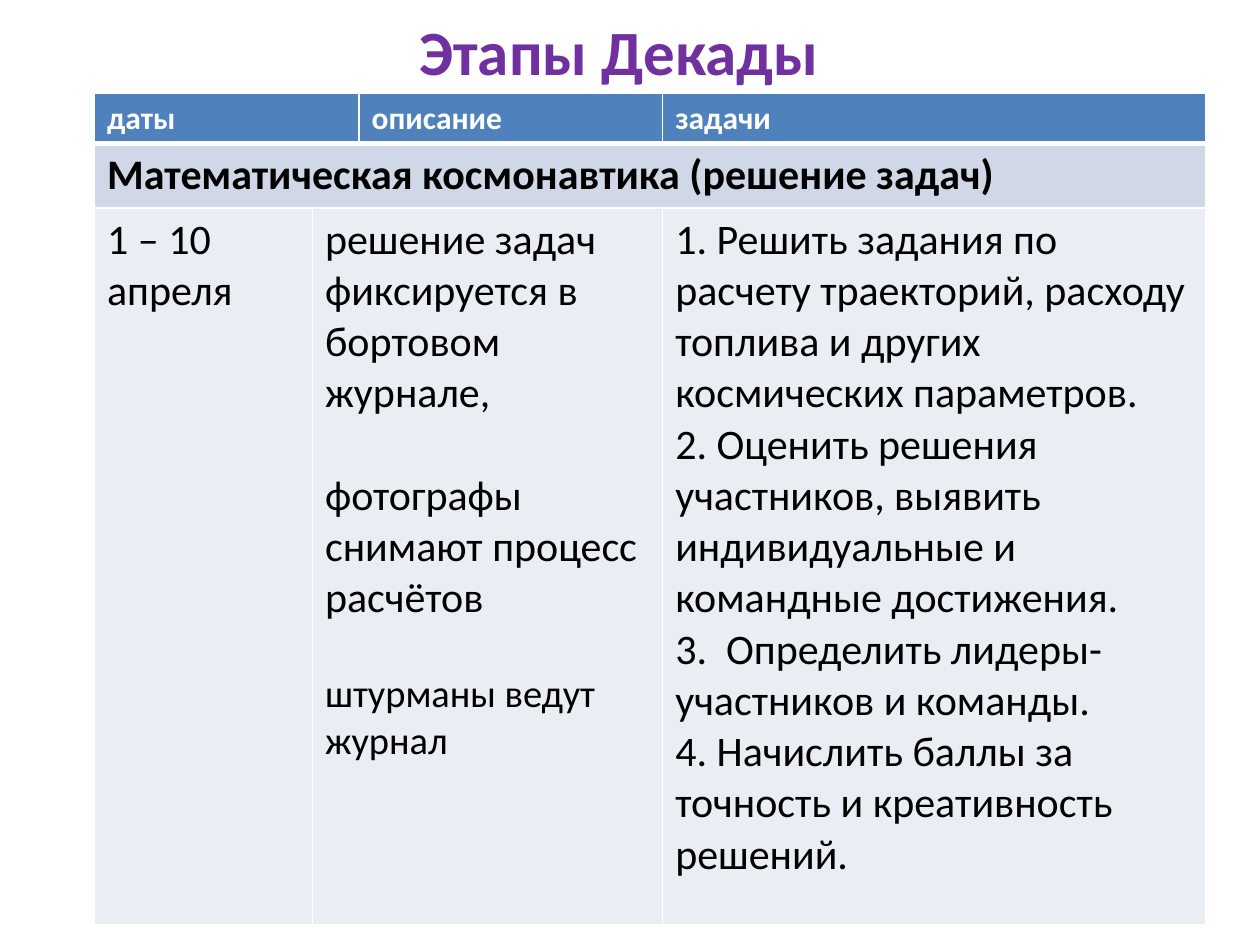
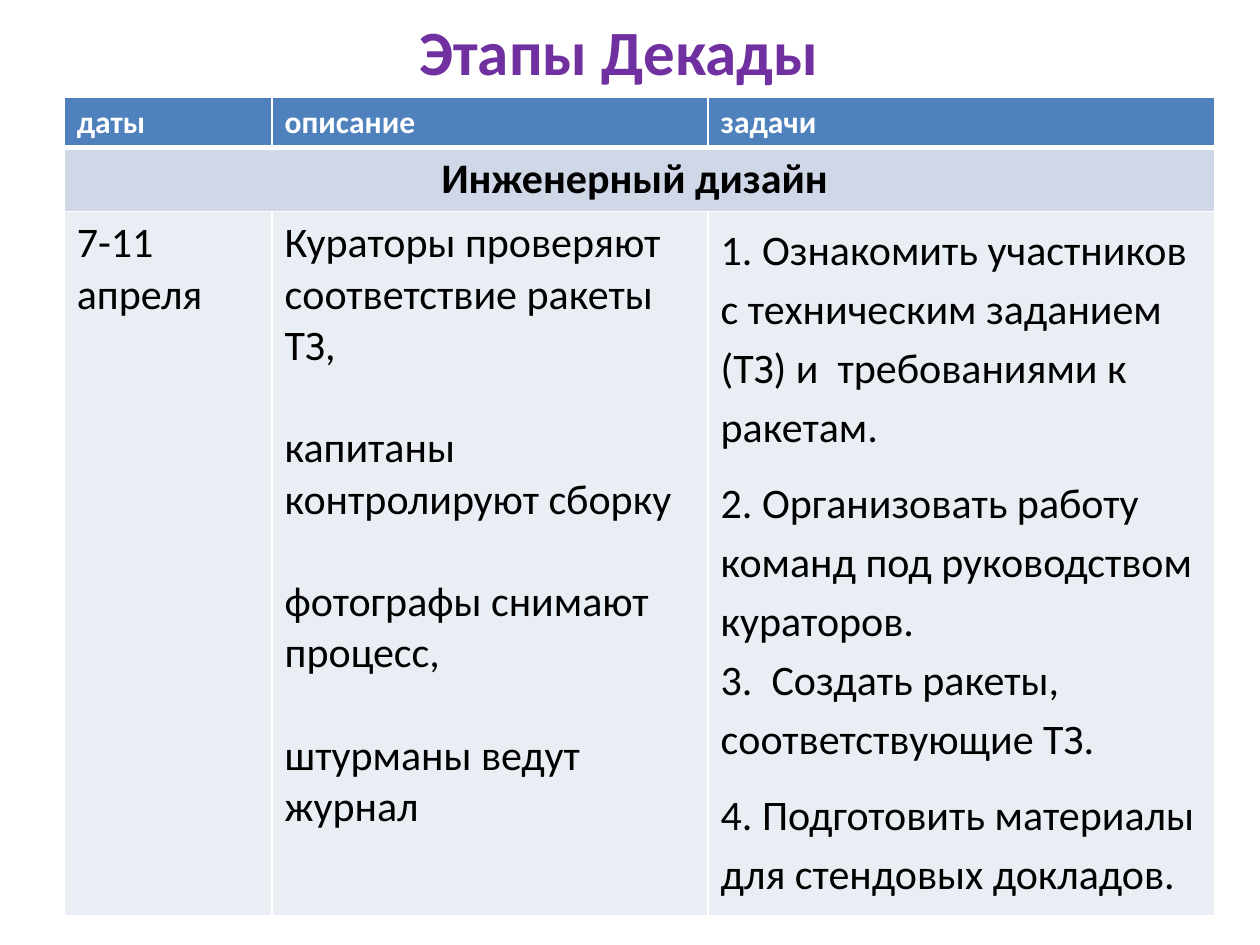
import pptx
import pptx.dml.color
import pptx.enum.text
import pptx.oxml
import pptx.oxml.ns
import pptx.util

COLORS = {
    "title": "7030A0",
    "header": "4F81BD",
    "stage": "D0D8E8",
    "body": "E9EDF4",
    "light": "FFFFFF",
    "dark": "000000",
}
FONT = "Calibri"
ALIGN = pptx.enum.text.PP_ALIGN
HEADINGS = ("даты", "описание", "задачи")


def color(name):
    return pptx.dml.color.RGBColor.from_string(COLORS[name])


def write_text(para, text, size=24, ink="dark", bold=False, align=None,
               before=0, after=0, spacing=None):
    """Fill a paragraph; a line feed in the text becomes a line break."""
    para.alignment = align
    para.space_before = pptx.util.Pt(before)
    para.space_after = pptx.util.Pt(after)
    para.line_spacing = spacing
    for number, line in enumerate(text.split("\n")):
        if number:
            para.add_line_break()
        span = para.add_run()
        span.text = line
        span.font.name = FONT
        span.font.size = pptx.util.Pt(size)
        span.font.bold = bold
        span.font.color.rgb = color(ink)


class StageDeck:
    """Slides on a grid of 100 columns by 75 rows."""

    def __init__(self):
        self.deck = pptx.Presentation()
        self.deck.slide_width = pptx.util.Inches(10)
        self.deck.slide_height = pptx.util.Inches(7.5)
        self.page = None

    def columns(self, count):
        return round(self.deck.slide_width * count / 100)

    def rows(self, count):
        return round(self.deck.slide_height * count / 75)

    def place(self, left, top, width, height):
        return (self.columns(left), self.rows(top),
                self.columns(width), self.rows(height))

    def add_page(self, title):
        self.page = self.deck.slides.add_slide(self.deck.slide_layouts[6])
        box = self.page.shapes.add_textbox(*self.place(17, 0.5, 65.4, 7.1))
        frame = box.text_frame
        frame.word_wrap = True
        frame.auto_size = pptx.enum.text.MSO_AUTO_SIZE.SHAPE_TO_FIT_TEXT
        write_text(frame.paragraphs[0], title, size=36, ink="title",
                   bold=True, align=ALIGN.CENTER)

    def add_borders(self, cell, top, bottom):
        properties = cell._tc.get_or_add_tcPr()
        for side, points in (("L", 1), ("R", 1), ("T", top), ("B", bottom)):
            properties.append(pptx.oxml.parse_xml(
                f'<a:ln{side} {pptx.oxml.ns.nsdecls("a")} w="{pptx.util.Pt(points)}">'
                f'<a:solidFill><a:srgbClr val="{COLORS["light"]}"/></a:solidFill>'
                f'</a:ln{side}>'))

    def fill_cell(self, cell, paragraphs):
        frame = cell.text_frame
        for number, (text, style) in enumerate(paragraphs):
            para = frame.add_paragraph() if number else frame.paragraphs[0]
            write_text(para, text, **style)

    def add_table(self, left, top, widths, heights, content):
        """Each content row lists (paragraphs, column span) pairs."""
        frame = self.page.shapes.add_table(
            len(heights), len(widths),
            *self.place(left, top, sum(widths), sum(heights)))
        table = frame.table
        for column, width in zip(table.columns, widths):
            column.width = self.columns(width)
        for row, height in zip(table.rows, heights):
            row.height = self.rows(height)

        # Fills and rules; a thick rule lies under the header
        for number, fill in enumerate(("header", "stage", "body")):
            for cell in table.rows[number].cells:
                self.add_borders(cell, top=3 if number == 1 else 1,
                                 bottom=3 if number == 0 else 1)
                cell.fill.solid()
                cell.fill.fore_color.rgb = color(fill)

        # Text and merged cells
        for number, entries in enumerate(content):
            start = 0
            for paragraphs, span in entries:
                cell = table.cell(number, start)
                if span > 1:
                    cell.merge(table.cell(number, start + span - 1))
                self.fill_cell(cell, paragraphs)
                start += span

    def add_stage(self, left, top, widths, heights, stage, stage_align,
                  details, header_spans=(1, 1, 1), detail_spans=(1, 1, 1)):
        header = [([(text, dict(size=18, ink="light", bold=True))], span)
                  for text, span in zip(HEADINGS, header_spans)]
        band = [([(stage, dict(bold=True, align=stage_align))], len(widths))]
        self.add_page("Этапы Декады ")
        self.add_table(left, top, widths, heights,
                       [header, band, list(zip(details, detail_spans))])


def main():
    show = StageDeck()
    gap = dict(before=29.3)
    task = dict(spacing=1.15, after=10)

    # Mathematics stage
    show.add_stage(
        7.5, 7.4, (17.3, 3.7, 24.1, 43.1), (4, 5.1, 56.9),
        "Математическая космонавтика (решение задач)", ALIGN.LEFT,
        [
            [("1 – 10 апреля", {})],
            [("решение задач фиксируется в бортовом журнале,", {}),
             ("фотографы снимают процесс расчётов", gap),
             ("штурманы ведут журнал", dict(size=22, before=26.9))],
            [("1. Решить задания по расчету траекторий, расходу топлива "
              "и других космических параметров.", {}),
             ("2. Оценить решения участников, выявить индивидуальные "
              "и командные достижения.", {}),
             ("3.  Определить лидеры-участников и команды.", {}),
             ("4. Начислить баллы за точность и креативность решений.", {})],
        ],
        header_spans=(2, 1, 1), detail_spans=(1, 2, 1))

    # Engineering stage
    show.add_stage(
        5.1, 7.7, (16.5, 34.6, 40.2), (4, 5.1, 55.9),
        "Инженерный дизайн ", ALIGN.CENTER,
        [
            [("7-11 апреля", {})],
            [("Кураторы проверяют соответствие ракеты ТЗ,", {}),
             ("капитаны контролируют сборку", gap),
             ("фотографы снимают процесс,", gap),
             ("штурманы ведут журнал", gap)],
            [("1. Ознакомить участников с техническим заданием (ТЗ) "
              "и  требованиями к ракетам.", task),
             ("2. Организовать работу команд под руководством кураторов.\n"
              "3.  Создать ракеты, соответствующие ТЗ.", task),
             ("4. Подготовить материалы для стендовых докладов.", task)],
        ])

    show.deck.save("out.pptx")


if __name__ == "__main__":
    main()
